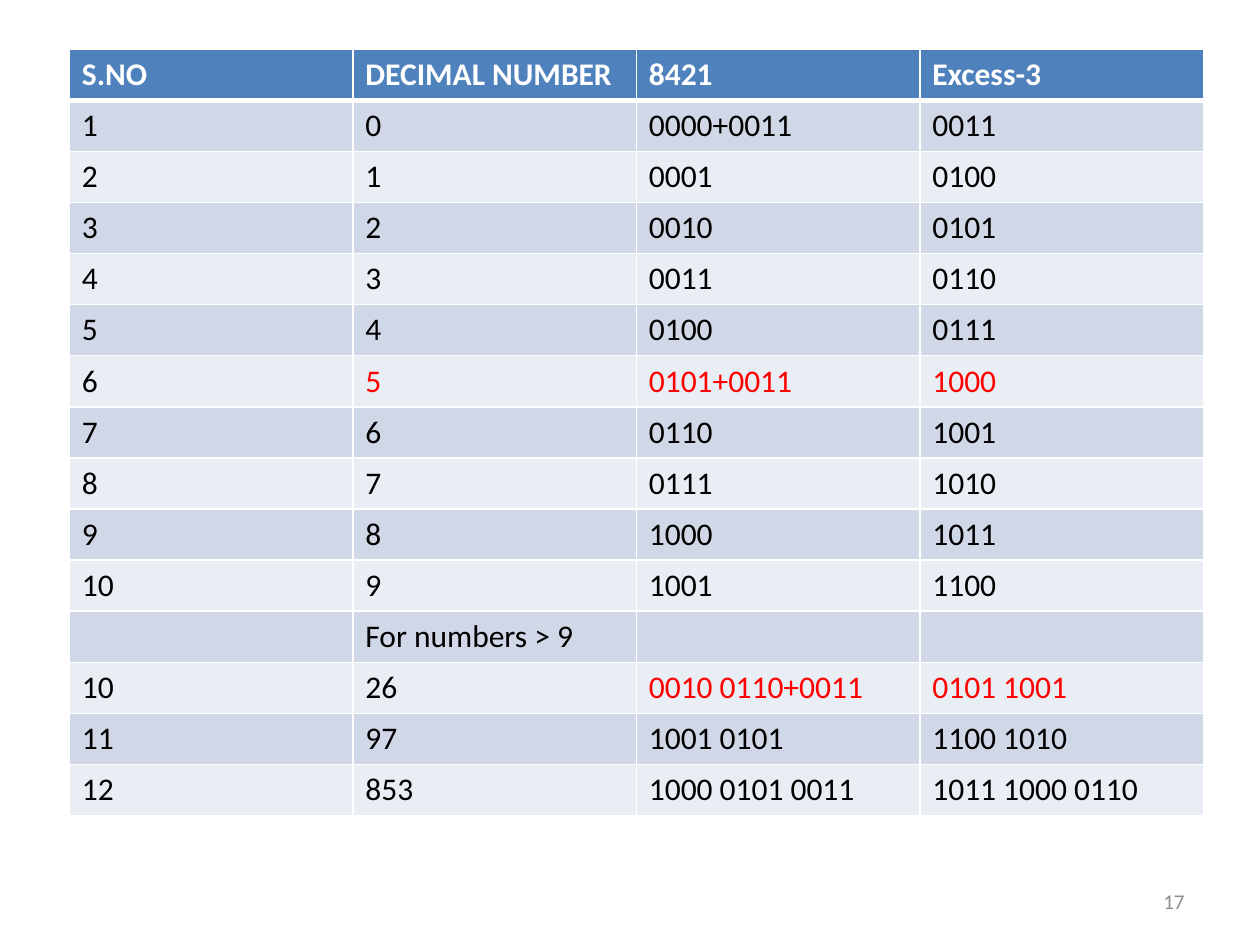
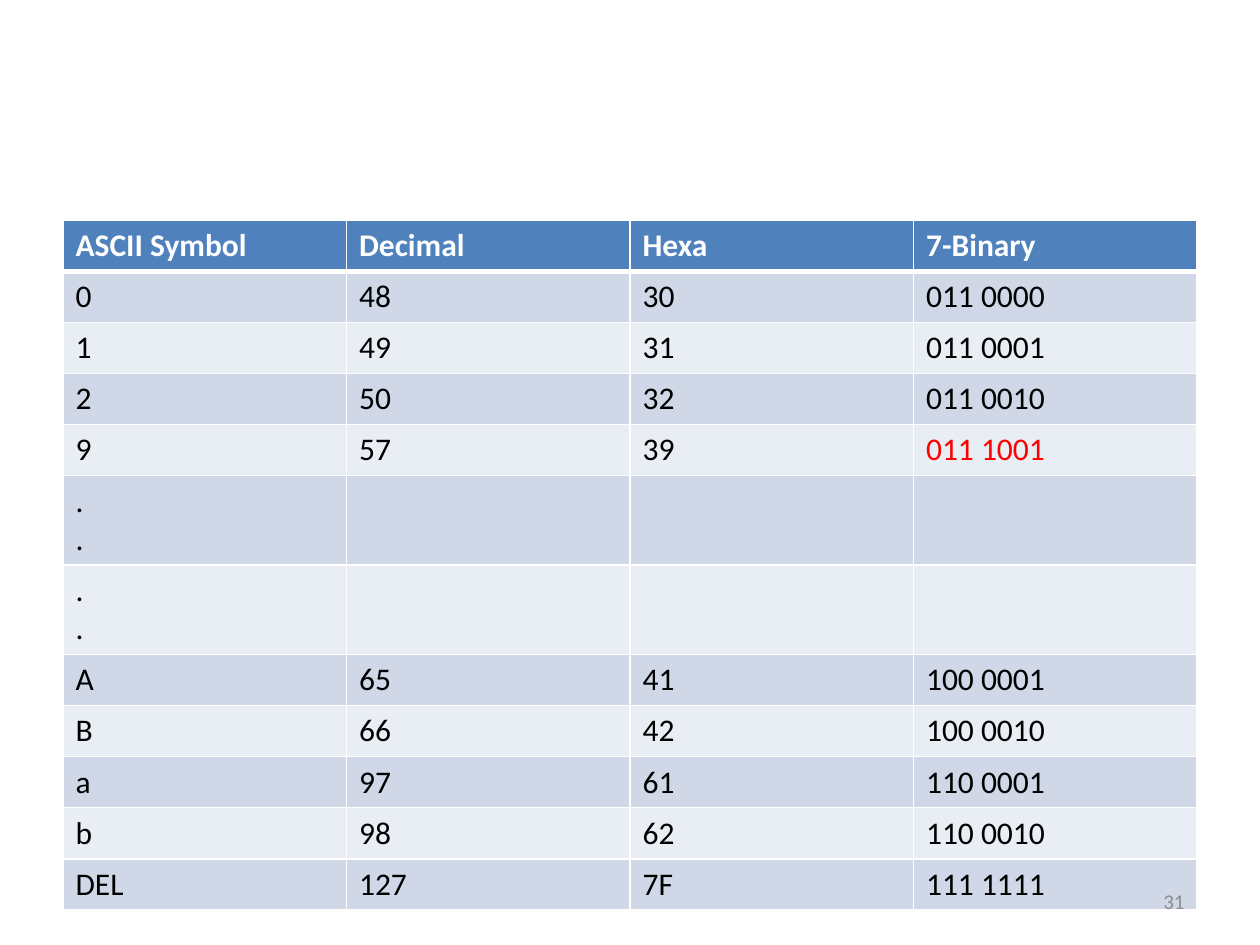
from lxml import etree
from pptx import Presentation
from pptx.dml.color import RGBColor
from pptx.enum.text import MSO_ANCHOR, PP_ALIGN
from pptx.oxml.ns import qn
from pptx.util import Inches, Pt

LEFT, RIGHT = PP_ALIGN.LEFT, PP_ALIGN.RIGHT
TOP, MIDDLE = MSO_ANCHOR.TOP, MSO_ANCHOR.MIDDLE

COLORS = {
    "header": "4F81BD",
    "band_dark": "D0D8E8",
    "band_light": "E9EDF4",
    "border": "FFFFFF",
    "header_text": "FFFFFF",
    "text": "000000",
    "highlight": "FF0000",
    "page_number": "8C8C8C",
}
FONT = "Calibri"
BLANK_LAYOUT = 6
COLUMN_WIDTH = Inches(2.25)
ROW_HEIGHT = Inches(6.08) // 15
TALL_ROW_HEIGHT = Inches(0.71)
PAGE_NUMBER_BOX = (Inches(7.17), Inches(6.95), Inches(2.33), Inches(0.4))

EXCESS_3_ROWS = [
    ("S.NO", "DECIMAL NUMBER", "8421", "Excess-3"),
    ("1", "0", "0000+0011", "0011"),
    ("2", "1", "0001", "0100"),
    ("3", "2", "0010", "0101"),
    ("4", "3", "0011", "0110"),
    ("5", "4", "0100", "0111"),
    ("6", "5", "0101+0011", "1000"),
    ("7", "6", "0110", "1001"),
    ("8", "7", "0111", "1010"),
    ("9", "8", "1000", "1011"),
    ("10", "9", "1001", "1100"),
    ("", "For numbers > 9", "", ""),
    ("10", "26", "0010 0110+0011", "0101 1001"),
    ("11", "97", "1001 0101", "1100 1010"),
    ("12", "853", "1000 0101 0011", "1011 1000 0110"),
]
EXCESS_3_HIGHLIGHTS = {(6, 1), (6, 2), (6, 3), (12, 2), (12, 3)}

ASCII_ROWS = [
    ("ASCII Symbol", "Decimal", "Hexa", "7-Binary"),
    ("0", "48", "30", "011 0000"),
    ("1", "49", "31", "011 0001"),
    ("2", "50", "32", "011 0010"),
    ("9", "57", "39", "011 1001"),
    (".\n.", "", "", ""),
    (".\n.", "", "", ""),
    ("A", "65", "41", "100 0001"),
    ("B", "66", "42", "100 0010"),
    ("a", "97", "61", "110 0001"),
    ("b", "98", "62", "110 0010"),
    ("DEL", "127", "7F", "111 1111"),
]
ASCII_HIGHLIGHTS = {(4, 3)}


def write_text(frame, text, color="text", size=18, bold=False, align=LEFT, anchor=TOP):
    """Fill a text frame with one formatted paragraph per line of text."""
    frame.word_wrap = True
    frame.vertical_anchor = anchor
    frame.text = text
    for para in frame.paragraphs:
        para.alignment = align
        for span in para.runs:
            span.font.name = FONT
            span.font.size = Pt(size)
            span.font.bold = bold
            span.font.color.rgb = RGBColor.from_string(COLORS[color])


def set_borders(cell, **widths):
    """Draw the cell borders, one point wide unless a side is given a width."""
    properties = cell._tc.get_or_add_tcPr()
    for side in "LRTB":
        width = Pt(widths.get(side, 1))
        line = etree.SubElement(properties, qn(f"a:ln{side}"), w=str(width))
        fill = etree.SubElement(line, qn("a:solidFill"))
        etree.SubElement(fill, qn("a:srgbClr"), val=COLORS["border"])


def style_cell(cell, text, row, highlighted):
    """Give a cell its text, borders and header or band fill."""
    if row == 0:
        fill, text_color, borders = "header", "header_text", {"B": 3}
    else:
        fill = "band_dark" if row % 2 else "band_light"
        text_color = "highlight" if highlighted else "text"
        borders = {"T": 3} if row == 1 else {}
    write_text(cell.text_frame, text, color=text_color, bold=row == 0)
    set_borders(cell, **borders)
    cell.fill.solid()
    cell.fill.fore_color.rgb = RGBColor.from_string(COLORS[fill])


def add_code_table(page, left, top, rows, highlights):
    """Add a banded table of codes with its top left corner at the given point."""
    heights = [TALL_ROW_HEIGHT if "\n" in row[0] else ROW_HEIGHT for row in rows]
    columns = len(rows[0])
    table = page.shapes.add_table(
        len(rows), columns, left, top, COLUMN_WIDTH * columns, sum(heights)
    ).table
    for column in table.columns:
        column.width = COLUMN_WIDTH
    for row, texts in enumerate(rows):
        table.rows[row].height = heights[row]
        for column, text in enumerate(texts):
            style_cell(table.cell(row, column), text, row, (row, column) in highlights)


def add_page_number(page, number):
    """Add the page number at the bottom right."""
    box = page.shapes.add_textbox(*PAGE_NUMBER_BOX)
    write_text(box.text_frame, str(number), color="page_number", size=12,
               align=RIGHT, anchor=MIDDLE)


def add_table_page(deck, number, left, top, rows, highlights):
    """Add a page that holds one code table and its page number."""
    page = deck.slides.add_slide(deck.slide_layouts[BLANK_LAYOUT])
    add_code_table(page, left, top, rows, highlights)
    add_page_number(page, number)


def main():
    """Build and save the deck."""
    deck = Presentation()
    deck.slide_width, deck.slide_height = Inches(10), Inches(7.5)
    add_table_page(deck, 17, Inches(0.55), Inches(0.39), EXCESS_3_ROWS, EXCESS_3_HIGHLIGHTS)
    add_table_page(deck, 31, Inches(0.5), Inches(1.75), ASCII_ROWS, ASCII_HIGHLIGHTS)
    deck.save("out.pptx")


if __name__ == "__main__":
    main()
